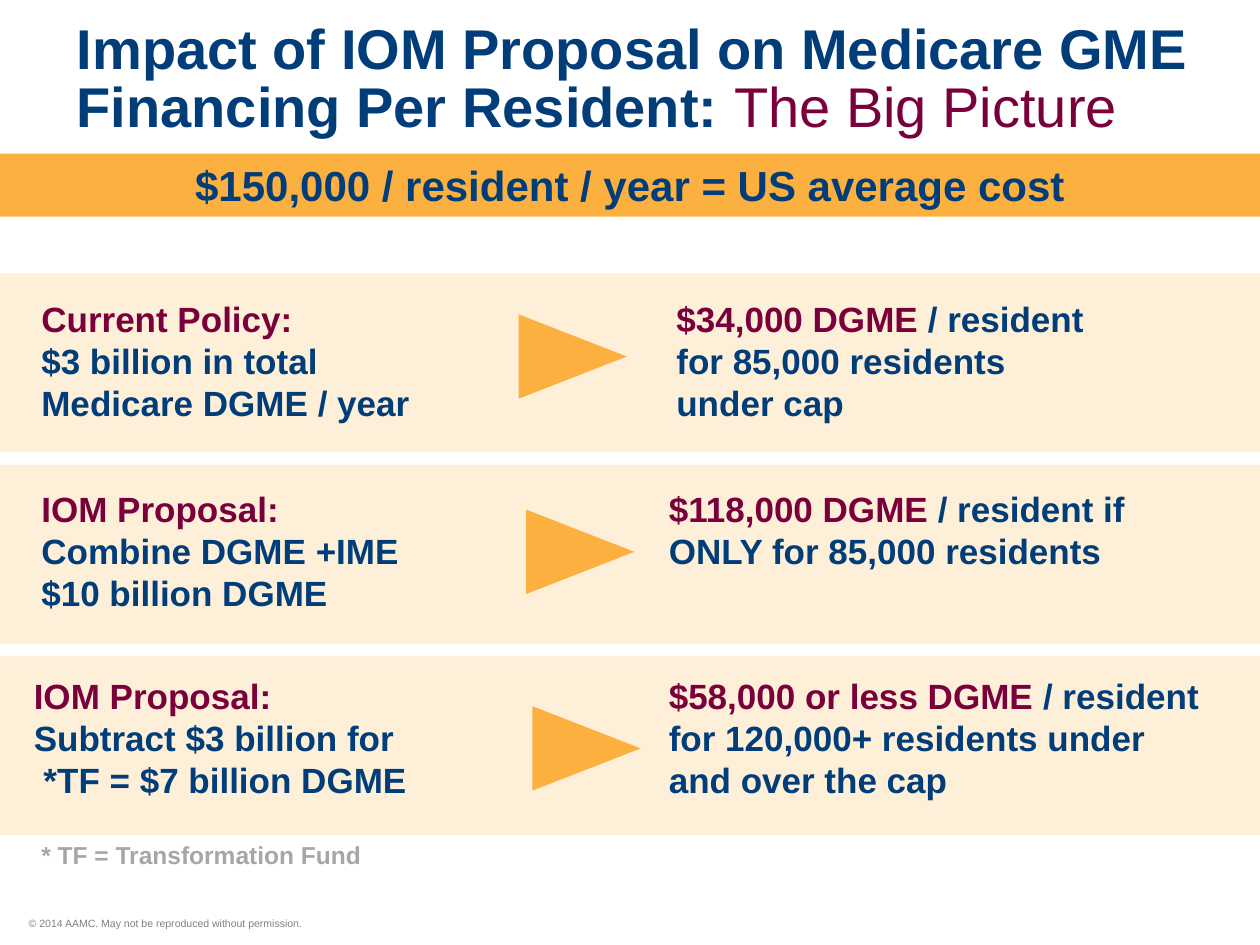
from dataclasses import dataclass
from pptx import Presentation
from pptx.dml.color import RGBColor
from pptx.enum.shapes import MSO_SHAPE as Kind
from pptx.enum.text import MSO_ANCHOR as Anchor, PP_ALIGN as Align
from pptx.util import Inches, Pt

NAVY, WINE, GOLD, CREAM = "013D79", "7A003B", "FCB040", "FEEFD9"
GREY, PALE = "808080", "A6A6A6"


@dataclass
class Run:
    text: str
    tint: str = NAVY
    bold: bool = True


@dataclass
class Box:
    left: float
    top: float
    width: float
    height: float

    def spans(self) -> list:
        return [Inches(n) for n in (self.left, self.top, self.width, self.height)]


@dataclass
class Row:
    band: float
    top: float
    left: float
    right: float
    arrow: Box
    cause: list
    effect: list


ROWS = [
    Row(2.17, 2.31, 0.23, 5.27, Box(4.21, 2.4, 0.67, 0.86),
        [[Run("Current Policy:", WINE)],
         [Run("$3 billion in total Medicare DGME / year")]],
        [[Run("$34,000 DGME", WINE), Run(" / resident")],
         [Run("for 85,000 residents")],
         [Run("under cap")]]),
    Row(3.69, 3.82, 0.23, 5.21, Box(4.27, 3.95, 0.67, 0.86),
        [[Run("IOM Proposal:", WINE)],
         [Run("Combine DGME +IME")],
         [Run("$10 billion DGME")]],
        [[Run("$118,000 DGME ", WINE),
          Run("/ resident if ONLY for 85,000 residents")]]),
    Row(5.21, 5.3, 0.17, 5.21, Box(4.32, 5.51, 0.67, 0.86),
        [[Run("IOM Proposal:", WINE)],
         [Run("Subtract $3 billion for")],
         [Run(" *TF = $7 billion DGME")]],
        [[Run("$58,000 or less DGME", WINE), Run(" / resident")],
         [Run("for 120,000+ residents under and over the cap")]]),
]


def color(code: str) -> RGBColor:
    return RGBColor.from_string(code)


def fill_text(frame, paras: list, size: float, **style) -> None:
    frame.word_wrap = True
    for i, runs in enumerate(paras):
        para = frame.paragraphs[0] if i == 0 else frame.add_paragraph()
        for name, value in style.items():
            setattr(para, name, value)
        for item in runs:
            run = para.add_run()
            run.text = item.text
            look = {"name": "Arial", "size": Pt(size), "bold": item.bold}
            for name, value in look.items():
                setattr(run.font, name, value)
            run.font.color.rgb = color(item.tint)


def add_text(slide, box: Box, paras: list, size: float = 20, **style):
    frame = slide.shapes.add_textbox(*box.spans()).text_frame
    fill_text(frame, paras, size, **style)
    return frame


def add_block(slide, kind: Kind, box: Box, tint: str):
    shape = slide.shapes.add_shape(kind, *box.spans())
    shape.shadow.inherit = False
    shape.fill.solid()
    shape.fill.fore_color.rgb = color(tint)
    shape.line.fill.background()
    return shape


def add_row(slide, row: Row) -> None:
    add_block(slide, Kind.RECTANGLE, Box(0, row.band, 10, 1.42), CREAM)
    add_text(slide, Box(row.left, row.top, 3.67 - row.left, 1.11), row.cause)
    add_text(slide, Box(row.right, row.top, 4.53, 1.11), row.effect)
    arrow = add_block(slide, Kind.ISOSCELES_TRIANGLE, row.arrow, GOLD)
    arrow.rotation = 90


def main() -> None:
    deck = Presentation()
    deck.slide_width, deck.slide_height = Inches(10), Inches(7.5)
    slide = deck.slides.add_slide(deck.slide_layouts[6])

    title = add_text(
        slide, Box(0.61, 0.42, 9.17, 0.68),
        [[Run("Impact of IOM Proposal on Medicare GME Financing Per Resident: "),
          Run("The Big Picture", WINE, False)]],
        32, line_spacing=0.85)
    title.vertical_anchor = Anchor.BOTTOM
    for side in ("left", "top", "right", "bottom"):
        setattr(title, f"margin_{side}", 0)

    banner = add_block(slide, Kind.RECTANGLE, Box(0, 1.22, 10, 0.5), GOLD)
    fill_text(banner.text_frame,
              [[Run("$150,000 / resident / year = US average cost")]],
              24, alignment=Align.CENTER)

    for row in ROWS:
        add_row(slide, row)

    add_text(slide, Box(0.23, 6.62, 2.83, 0.34),
             [[Run("* TF = Transformation Fund", PALE)]], 14)
    add_text(slide, Box(0.13, 7.23, 6.17, 0.2),
             [[Run("© 2014 AAMC. May not be reproduced without permission.",
                   GREY, False)]], 6)
    deck.save("out.pptx")


if __name__ == "__main__":
    main()
